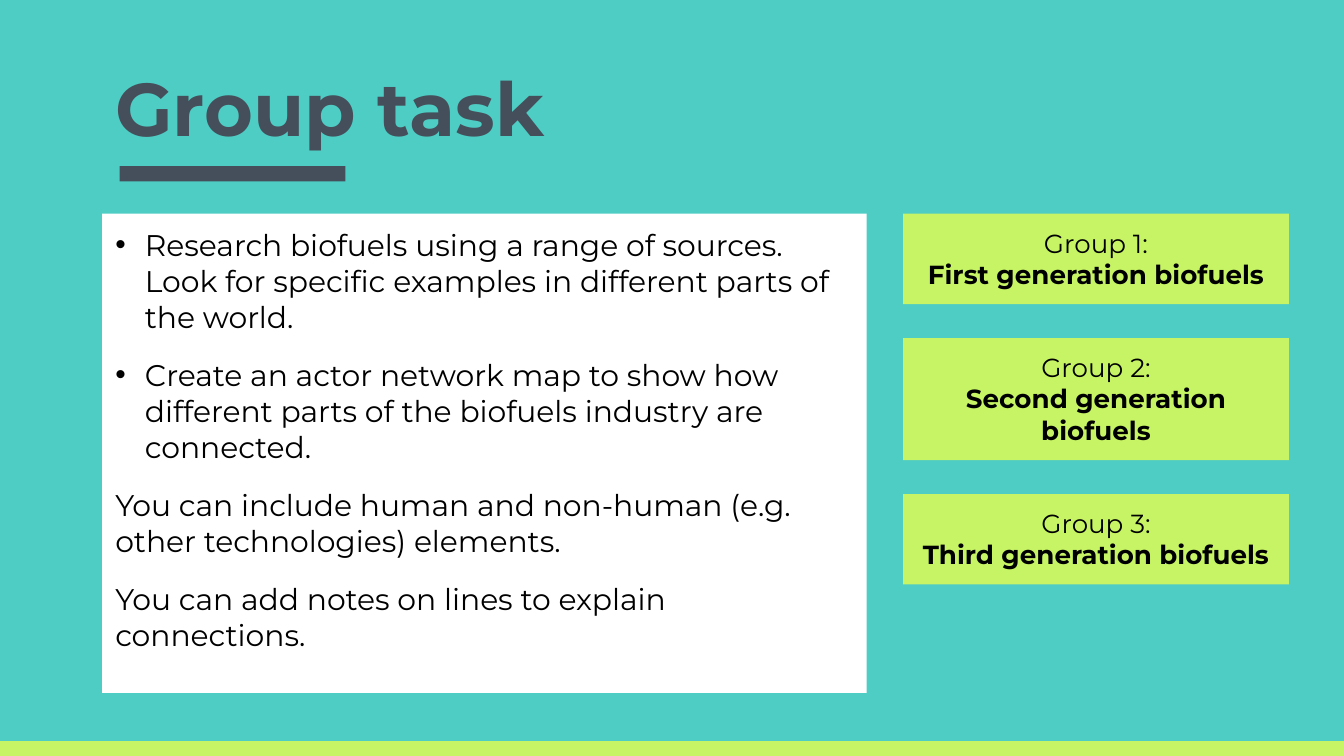
from dataclasses import dataclass

import pptx
import pptx.dml.color
import pptx.enum.shapes
import pptx.enum.text
import pptx.oxml
import pptx.oxml.ns
import pptx.util
from pptx.util import Cm

COLOURS = {
    "background": "4ECDC4",
    "lime": "C7F464",
    "slate": "454F5B",
    "white": "FFFFFF",
    "black": "000000",
}
FONT = "Montserrat"
INSET = Cm(0.25)
PANEL_LEFT = Cm(1.93)
CONTENT_TOP = Cm(4.04)
CARD_LEFT = Cm(17.07)
CARD_WIDTH = Cm(7.29)
CARD_GAP = Cm(0.64)
BULLET_INDENT = Cm(0.56)


@dataclass(frozen=True)
class Group:
    label: str
    topic: str
    height: int


@dataclass(frozen=True)
class Instruction:
    text: str
    bulleted: bool = False


GROUPS = [
    Group("Group 1:", "First generation biofuels", Cm(1.71)),
    Group("Group 2:", "Second generation biofuels", Cm(2.31)),
    Group("Group 3:", "Third generation biofuels", Cm(1.71)),
]
INSTRUCTIONS = [
    Instruction("Research biofuels using a range of sources. Look for specific "
                "examples in different parts of the world.", True),
    Instruction("Create an actor network map to show how different parts of the "
                "biofuels industry are connected.", True),
    Instruction("You can include human and non-human (e.g. other technologies) elements."),
    Instruction("You can add notes on lines to explain connections."),
]


def colour(name: str) -> pptx.dml.color.RGBColor:
    return pptx.dml.color.RGBColor.from_string(COLOURS[name])


def add_block(slide, left: int, top: int, width: int, height: int, fill: str):
    shape = slide.shapes.add_shape(
        pptx.enum.shapes.MSO_SHAPE.RECTANGLE, left, top, width, height)
    shape.shadow.inherit = False
    shape.fill.solid()
    shape.fill.fore_color.rgb = colour(fill)
    shape.line.fill.background()
    return shape


def prepare_frame(shape, anchor=pptx.enum.text.MSO_ANCHOR.TOP, grow: bool = True):
    frame = shape.text_frame
    frame.word_wrap = True
    frame.vertical_anchor = anchor
    frame.margin_left = frame.margin_right = INSET
    frame.margin_top = frame.margin_bottom = INSET
    sizes = pptx.enum.text.MSO_AUTO_SIZE
    frame.auto_size = sizes.SHAPE_TO_FIT_TEXT if grow else sizes.NONE
    return frame


def write_text(frame, text: str, *, size: int, color: str = "black", bold: bool = False,
               align=pptx.enum.text.PP_ALIGN.LEFT, space_after: int = 0,
               bulleted: bool = False) -> None:
    first = frame.paragraphs[0]
    paragraph = frame.add_paragraph() if first.runs else first
    paragraph.alignment = align
    paragraph.space_after = pptx.util.Pt(space_after)
    run = paragraph.add_run()
    run.text = text
    run.font.name = FONT
    run.font.size = pptx.util.Pt(size)
    run.font.bold = bold
    run.font.color.rgb = colour(color)
    if bulleted:
        add_bullet(paragraph, color)


def add_bullet(paragraph, color: str) -> None:
    properties = paragraph._p.get_or_add_pPr()
    properties.set("marL", str(BULLET_INDENT))
    properties.set("indent", str(-BULLET_INDENT))
    namespace = pptx.oxml.ns.nsdecls("a")
    for markup in (
        f'<a:buClr {namespace}><a:srgbClr val="{COLOURS[color]}"/></a:buClr>',
        f'<a:buFont {namespace} typeface="Arial"/>',
        f'<a:buChar {namespace} char="•"/>',
    ):
        properties.append(pptx.oxml.parse_xml(markup))


def draw_title(slide) -> None:
    box = slide.shapes.add_textbox(PANEL_LEFT, Cm(0.43), Cm(21.56), Cm(2.69))
    frame = prepare_frame(box, pptx.enum.text.MSO_ANCHOR.BOTTOM, grow=False)
    write_text(frame, "Group task", size=40, color="slate", bold=True)
    add_block(slide, Cm(2.26), Cm(3.14), Cm(4.27), Cm(0.29), "slate")


def draw_instructions(slide, instructions: list[Instruction]) -> None:
    panel = add_block(slide, PANEL_LEFT, CONTENT_TOP, Cm(14.45), Cm(9.06), "white")
    frame = prepare_frame(panel)
    for instruction in instructions:
        write_text(frame, instruction.text, size=16, space_after=12,
                   bulleted=instruction.bulleted)


def draw_groups(slide, groups: list[Group]) -> None:
    top = CONTENT_TOP
    for group in groups:
        card = add_block(slide, CARD_LEFT, top, CARD_WIDTH, group.height, "lime")
        frame = prepare_frame(card)
        center = pptx.enum.text.PP_ALIGN.CENTER
        write_text(frame, group.label, size=14, align=center)
        write_text(frame, group.topic, size=14, bold=True, align=center)
        top += group.height + CARD_GAP


def main() -> None:
    presentation = pptx.Presentation()
    presentation.slide_width = Cm(25.4)
    presentation.slide_height = Cm(14.29)
    slide = presentation.slides.add_slide(presentation.slide_layouts[6])
    slide.background.fill.solid()
    slide.background.fill.fore_color.rgb = colour("background")
    strip_height = Cm(0.28)
    add_block(slide, 0, presentation.slide_height - strip_height,
              presentation.slide_width, strip_height, "lime")
    draw_groups(slide, GROUPS)
    draw_instructions(slide, INSTRUCTIONS)
    draw_title(slide)
    presentation.save("out.pptx")


if __name__ == "__main__":
    main()
